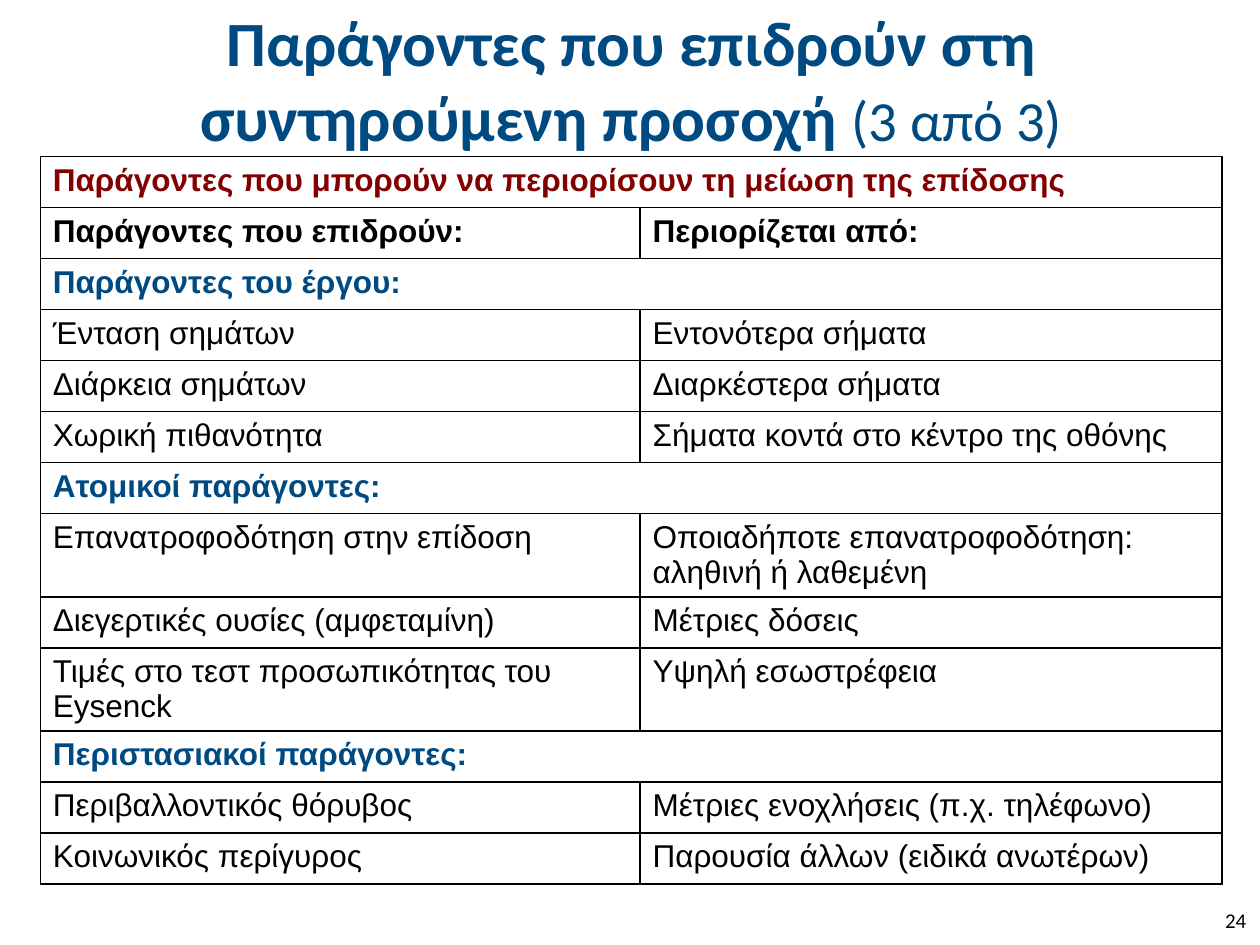
from dataclasses import dataclass
from typing import NamedTuple

from lxml.etree import SubElement as Sub
from pptx import Presentation
from pptx.dml.color import RGBColor as Rgb
from pptx.enum.text import MSO_ANCHOR as Anchor, PP_ALIGN as Align
from pptx.oxml.ns import qn
from pptx.util import Inches, Pt


@dataclass(frozen=True)
class Theme:
    blue: str = "004A82"
    red: str = "820000"
    black: str = "000000"
    head: str = "Calibri"
    body: str = "Arial"
    title: float = 36
    count: float = 32.4
    cell: float = 18
    page: float = 12
    line: float = 1


class Row(NamedTuple):
    left: str
    right: str = ""
    color: str = Theme.black
    bold: bool = False


THEME = Theme()


def group(text: str, color: str = THEME.blue) -> Row:
    return Row(text, color=color, bold=True)


ROWS = [
    group("Παράγοντες που μπορούν να περιορίσουν τη μείωση της επίδοσης", THEME.red),
    Row("Παράγοντες που επιδρούν:", "Περιορίζεται από:", bold=True),
    group("Παράγοντες του έργου:"),
    Row("Ένταση σημάτων", "Εντονότερα σήματα"),
    Row("Διάρκεια σημάτων", "Διαρκέστερα σήματα"),
    Row("Χωρική πιθανότητα", "Σήματα κοντά στο κέντρο της οθόνης"),
    group("Ατομικοί παράγοντες:"),
    Row("Επανατροφοδότηση στην επίδοση", "Οποιαδήποτε επανατροφοδότηση: αληθινή ή λαθεμένη"),
    Row("Διεγερτικές ουσίες (αμφεταμίνη)", "Μέτριες δόσεις"),
    Row("Τιμές στο τεστ προσωπικότητας του Eysenck", "Υψηλή εσωστρέφεια"),
    group("Περιστασιακοί παράγοντες:"),
    Row("Περιβαλλοντικός θόρυβος", "Μέτριες ενοχλήσεις (π.χ. τηλέφωνο)"),
    Row("Κοινωνικός περίγυρος", "Παρουσία άλλων (ειδικά ανωτέρων)"),
]


def write(frame, text: str, *, size: float, font: str = THEME.body,
          color: str = THEME.black, bold: bool = False, align=Align.LEFT) -> None:
    para = frame.paragraphs[0]
    para.alignment = align
    run = para.add_run()
    run.text = text
    run.font.size = Pt(size)
    run.font.name = font
    run.font.bold = bold
    run.font.color.rgb = Rgb.from_string(color)


def border(cell) -> None:
    cell.fill.background()
    props = cell._tc.get_or_add_tcPr()
    for spot, side in enumerate(("lnL", "lnR", "lnT", "lnB")):
        line = Sub(props, qn(f"a:{side}"), w=str(Pt(THEME.line)))
        fill = Sub(line, qn("a:solidFill"))
        Sub(fill, qn("a:srgbClr"), val=THEME.black)
        props.insert(spot, line)


def add_title(slide) -> None:
    title = slide.shapes.title
    title.left, title.top = Inches(0.51), Inches(0.13)
    title.width, title.height = Inches(9), Inches(0.99)
    frame = title.text_frame
    frame.word_wrap = True
    frame.vertical_anchor = Anchor.MIDDLE
    look = dict(font=THEME.head, color=THEME.blue, align=Align.CENTER)
    write(frame, "Παράγοντες που επιδρούν στη συντηρούμενη προσοχή ",
          size=THEME.title, bold=True, **look)
    write(frame, "(3 από 3)", size=THEME.count, **look)


def add_grid(slide, rows: list[Row]) -> None:
    table = slide.shapes.add_table(len(rows), 2, Inches(0.32), Inches(1.24),
                                   Inches(9.38), Inches(5.27)).table
    table.first_row = table.horz_banding = False
    for col, width in zip(table.columns, (4.76, 4.62)):
        col.width = Inches(width)
    for at, row in enumerate(rows):
        cells = [table.cell(at, col) for col in range(2)]
        if not row.right:
            cells[0].merge(cells[1])
        for cell, text in zip(cells, (row.left, row.right)):
            border(cell)
            if text:
                write(cell.text_frame, text, size=THEME.cell,
                      color=row.color, bold=row.bold)


def add_page(slide, text: str) -> None:
    frame = slide.shapes.add_textbox(Inches(7.66), Inches(7.1),
                                     Inches(2.33), Inches(0.4)).text_frame
    frame.word_wrap = True
    frame.vertical_anchor = Anchor.MIDDLE
    write(frame, text, size=THEME.page, font=THEME.head, align=Align.RIGHT)


def main() -> None:
    deck = Presentation()
    deck.slide_width, deck.slide_height = Inches(10), Inches(7.5)
    slide = deck.slides.add_slide(deck.slide_layouts[5])
    add_title(slide)
    add_grid(slide, ROWS)
    add_page(slide, "24")
    deck.save("out.pptx")


if __name__ == "__main__":
    main()
